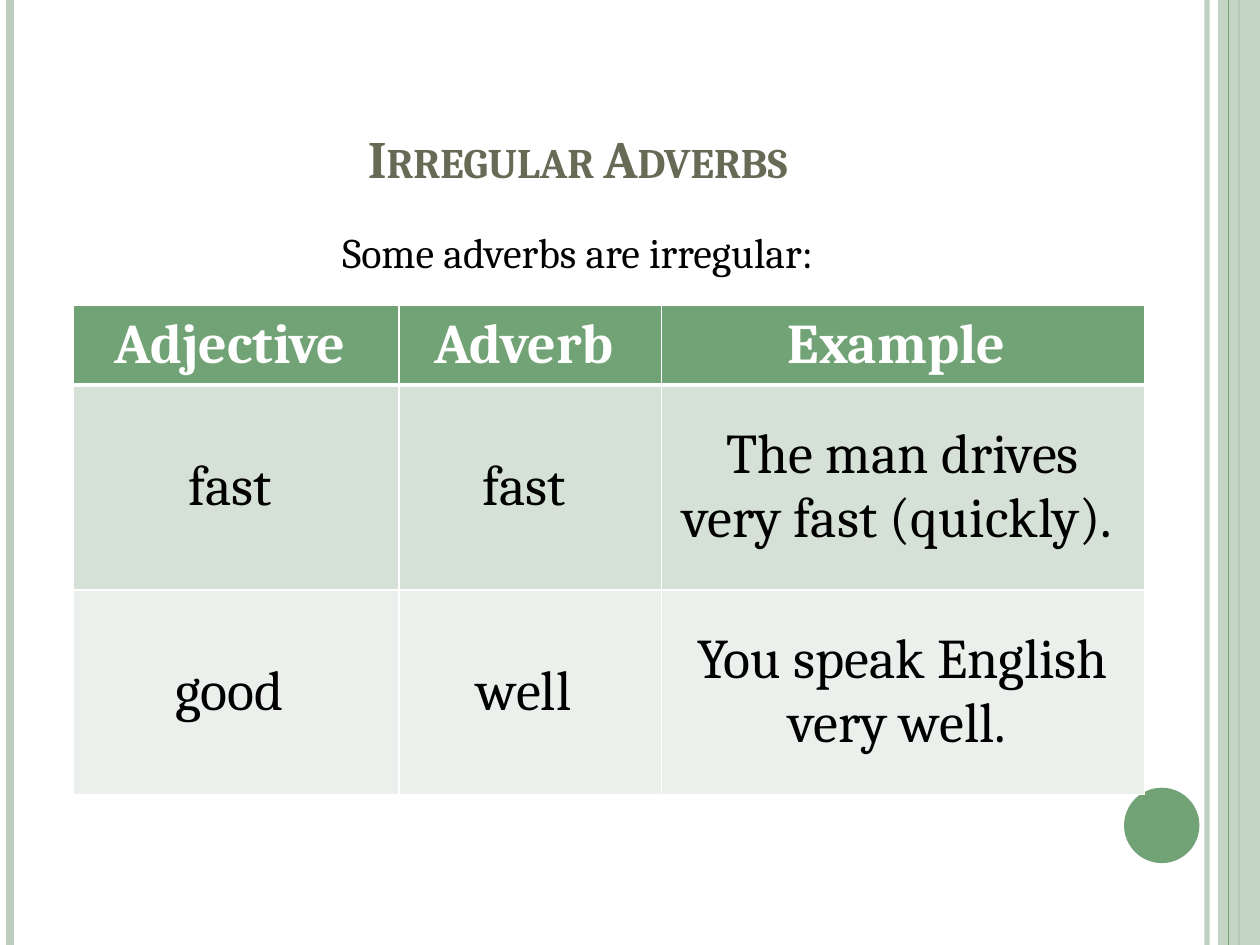
"""Build the slide about irregular adverbs."""
from lxml.etree import SubElement
from pptx import Presentation
from pptx.dml.color import RGBColor
from pptx.enum.shapes import MSO_CONNECTOR, MSO_SHAPE
from pptx.enum.text import MSO_ANCHOR, PP_ALIGN
from pptx.oxml.ns import qn
from pptx.util import Cm, Pt

WIDTH, HEIGHT = 25.4, 19.05
GREEN, PALE_GREEN, OLIVE = "72A376", "BCCEBD", "676A55"
WHITE, BLACK = "FFFFFF", "000000"
BANDS = ["D5E0D6", "EBF0EC"]


def color(value):
    return RGBColor.from_string(value)


def set_alpha(fill_parent, percent):
    choice = fill_parent.find(".//" + qn("a:srgbClr"))
    SubElement(choice, qn("a:alpha"), val=str(percent * 1000))


def write(frame, text, size=32, fill=BLACK, bold=False, small_caps=False,
          anchor=MSO_ANCHOR.MIDDLE, space_before=0, font="Cambria"):
    frame.word_wrap = True
    frame.vertical_anchor = anchor
    paragraph = frame.paragraphs[0]
    paragraph.alignment = PP_ALIGN.CENTER
    paragraph.space_before = Pt(space_before)
    run = paragraph.add_run()
    run.text = text
    run.font.name = font
    run.font.size = Pt(size)
    run.font.bold = bold
    run.font.color.rgb = color(fill)
    if small_caps:
        run.font._element.set("cap", "small")


class SlideBuilder:
    def __init__(self, slide, font="Cambria"):
        self.slide = slide
        self.font = font

    def title(self, text, left, top, width, height, **style):
        shape = self.slide.shapes.title
        shape.left, shape.top = Cm(left), Cm(top)
        shape.width, shape.height = Cm(width), Cm(height)
        write(shape.text_frame, text, font=self.font, **style)

    def text(self, text, left, top, width, height, **style):
        shape = self.slide.shapes.add_textbox(Cm(left), Cm(top), Cm(width), Cm(height))
        write(shape.text_frame, text, font=self.font, **style)

    def vertical_line(self, x, fill, weight, alpha=100):
        line = self.slide.shapes.add_connector(
            MSO_CONNECTOR.STRAIGHT, Cm(x), Cm(0), Cm(x), Cm(HEIGHT))
        line.line.color.rgb = color(fill)
        line.line.width = Pt(weight)
        properties = line._element.spPr
        if alpha < 100:
            set_alpha(properties, alpha)
        SubElement(properties, qn("a:effectLst"))

    def shape(self, kind, left, top, width, height, fill, alpha=100):
        shape = self.slide.shapes.add_shape(
            kind, Cm(left), Cm(top), Cm(width), Cm(height))
        shape.shadow.inherit = False
        shape.fill.solid()
        shape.fill.fore_color.rgb = color(fill)
        shape.line.fill.background()
        if alpha < 100:
            set_alpha(shape._element.spPr, alpha)

    def border(self, cell, **weights):
        properties = cell._tc.get_or_add_tcPr()
        for side, weight in weights.items():
            line = SubElement(properties, qn("a:ln" + side), w=str(Pt(weight)))
            SubElement(SubElement(line, qn("a:solidFill")), qn("a:srgbClr"), val=WHITE)

    def table(self, rows, left, top, widths, heights):
        table = self.slide.shapes.add_table(
            len(rows), len(widths), Cm(left), Cm(top),
            Cm(sum(widths)), Cm(sum(heights))).table
        for column, width in zip(table.columns, widths):
            column.width = Cm(width)
        for index, (row, height) in enumerate(zip(rows, heights)):
            table.rows[index].height = Cm(height)
            header = index == 0
            for cell, text in zip(table.rows[index].cells, row):
                self.border(cell, L=1, R=1, T=3 if index == 1 else 1, B=3 if header else 1)
                cell.fill.solid()
                cell.fill.fore_color.rgb = color(GREEN if header else BANDS[(index - 1) % 2])
                cell.vertical_anchor = MSO_ANCHOR.MIDDLE
                write(cell.text_frame, text, font=self.font, bold=header,
                      fill=WHITE if header else BLACK)


def main():
    presentation = Presentation()
    presentation.slide_width, presentation.slide_height = Cm(WIDTH), Cm(HEIGHT)
    builder = SlideBuilder(presentation.slides.add_slide(presentation.slide_layouts[5]))

    builder.vertical_line(24.33, PALE_GREEN, 3, alpha=93)
    builder.vertical_line(0.21, PALE_GREEN, 4.5)
    builder.vertical_line(24.98, GREEN, 1.5)
    builder.shape(MSO_SHAPE.RECTANGLE, 24.55, 0, 0.85, HEIGHT, PALE_GREEN, alpha=87)
    builder.vertical_line(24.77, GREEN, 0.75)
    builder.shape(MSO_SHAPE.OVAL, 22.66, 15.88, 1.52, 1.52, GREEN)

    builder.title("Irregular Adverbs", 1.27, 0.76, 20.75, 3.18, size=30, fill=OLIVE,
                  bold=True, small_caps=True, anchor=MSO_ANCHOR.BOTTOM)
    builder.text("Some adverbs are irregular:", 1.27, 4.45, 20.75, 13.54, size=24,
                 anchor=MSO_ANCHOR.TOP, space_before=6)
    builder.table([
        ["Adjective ", "Adverb ", "Example "],
        ["fast ", "fast ", "The man drives very fast (quickly). "],
        ["good ", "well ", "You speak English very well. "],
    ], 1.48, 6.15, [6.56, 5.29, 9.74], [1.54, 4.13, 4.13])

    presentation.save("out.pptx")


if __name__ == "__main__":
    main()
